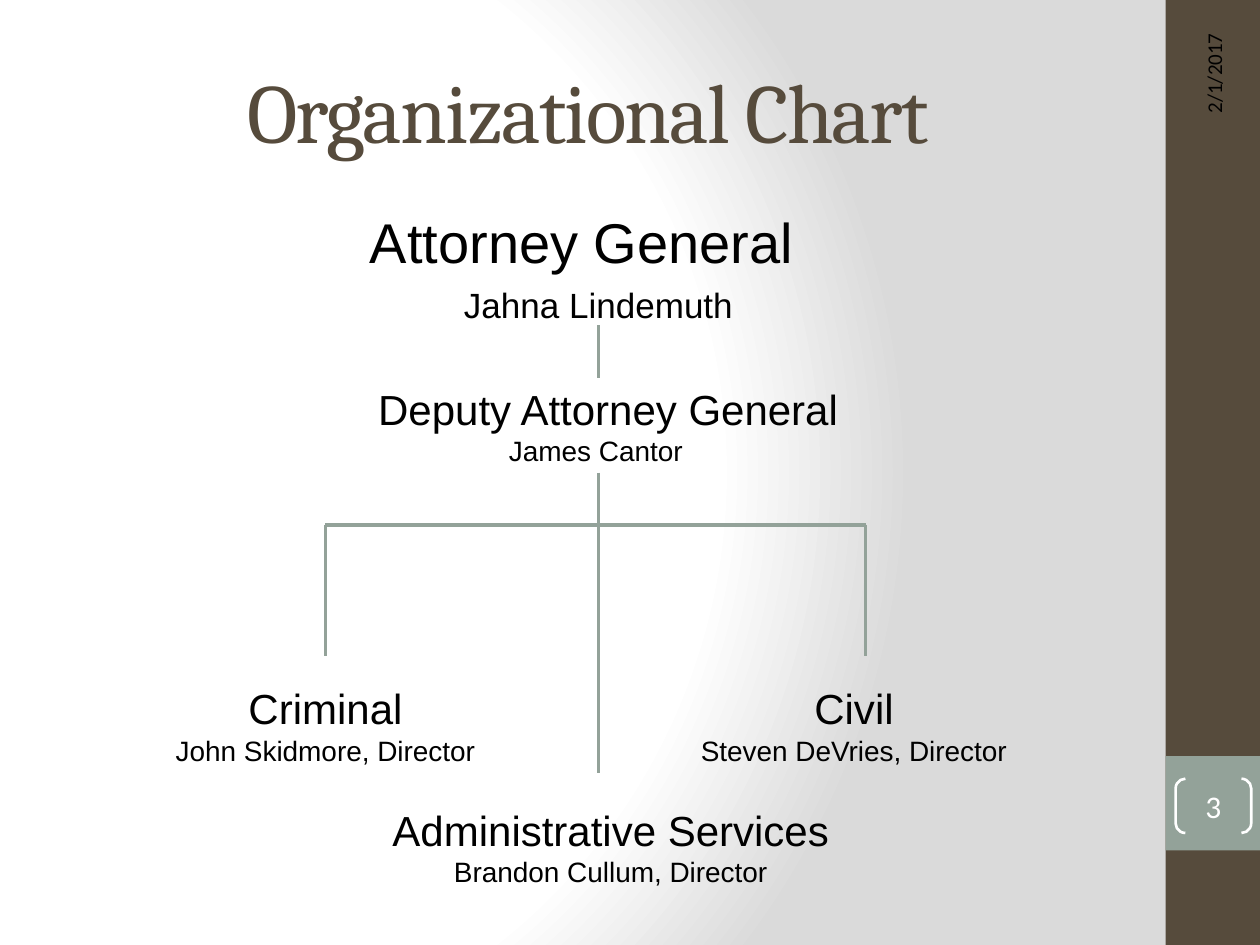
from dataclasses import dataclass

from lxml.etree import SubElement
from pptx import Presentation
from pptx.dml.color import RGBColor
from pptx.enum.shapes import MSO_CONNECTOR, MSO_SHAPE
from pptx.enum.text import MSO_ANCHOR, PP_ALIGN
from pptx.oxml import parse_xml
from pptx.oxml.ns import nsdecls, qn
from pptx.slide import Slide
from pptx.util import Pt

COLORS = {
    "brown": "564B3C",
    "sage": "93A299",
    "white": "FFFFFF",
    "gray": "DADADA",
    "black": "000000",
}


@dataclass
class Canvas:
    """Draws styled elements on the current slide, with lengths in points."""

    slide: Slide
    font: str = "Arial"
    line_width: float = 2

    def color(self, name):
        return RGBColor.from_string(COLORS[name])

    def background(self, stops):
        self.slide.background.fill.solid()
        solid = self.slide.element.find(".//" + qn("p:bgPr")).find(qn("a:solidFill"))
        stop_xml = "".join(
            f'<a:gs pos="{percent * 1000}"><a:srgbClr val="{COLORS[name]}"/></a:gs>'
            for percent, name in stops
        )
        gradient = parse_xml(
            f'<a:gradFill {nsdecls("a")} rotWithShape="1"><a:gsLst>{stop_xml}</a:gsLst>'
            '<a:path path="circle"><a:fillToRect l="20000" t="50000" r="100000" b="50000"/>'
            "</a:path></a:gradFill>"
        )
        solid.getparent().replace(solid, gradient)

    def shape(self, kind, box, fill=None, line=None):
        shape = self.slide.shapes.add_shape(kind, *map(Pt, box))
        shape.shadow.inherit = False
        if fill:
            shape.fill.solid()
            shape.fill.fore_color.rgb = self.color(fill)
        else:
            shape.fill.background()
        if line:
            shape.line.color.rgb = self.color(line)
            shape.line.width = Pt(1.5)
        else:
            shape.line.fill.background()
        return shape

    def styled_run(self, paragraph, text, size, font=None, color="black", spacing=0):
        run = paragraph.add_run()
        run.text = text
        run.font.size = Pt(size)
        run.font.name = font or self.font
        run.font.color.rgb = self.color(color)
        if spacing:
            run.font._element.set("spc", str(spacing * 100))

    def text(self, box, lines, align=PP_ALIGN.CENTER, anchor=MSO_ANCHOR.TOP, **style):
        shape = self.slide.shapes.add_textbox(*map(Pt, box))
        frame = shape.text_frame
        frame.word_wrap = True
        frame.vertical_anchor = anchor
        for index, (text, size, before, indent) in enumerate(lines):
            paragraph = frame.add_paragraph() if index else frame.paragraphs[0]
            paragraph.alignment = align
            paragraph.space_before = Pt(before)
            paragraph._p.get_or_add_pPr().set("marL", str(Pt(indent)))
            self.styled_run(paragraph, text, size, **style)
        return shape

    def unit(self, box, name, person):
        self.text(box, [(name, 24, 0, 0), (person, 16, 0, 0)])

    def line(self, start, end):
        connector = self.slide.shapes.add_connector(
            MSO_CONNECTOR.STRAIGHT, *map(Pt, start + end)
        )
        connector.line.color.rgb = self.color("sage")
        connector.line.width = Pt(self.line_width)
        SubElement(connector._element.spPr, qn("a:effectLst"))


def main():
    presentation = Presentation()
    presentation.slide_width, presentation.slide_height = Pt(720), Pt(540)
    canvas = Canvas(presentation.slides.add_slide(presentation.slide_layouts[6]))

    canvas.background([(0, "white"), (75, "white"), (100, "gray")])
    canvas.shape(MSO_SHAPE.RECTANGLE, (666, 0, 54, 540), fill="brown")
    canvas.shape(MSO_SHAPE.RECTANGLE, (666, 432, 54, 54), fill="sage")

    canvas.text(
        (36, 18, 600, 90),
        [("Organizational Chart", 48, 0, 0)],
        anchor=MSO_ANCHOR.MIDDLE,
        font="Cambria",
        color="brown",
        spacing=-1,
    )
    leaders = canvas.text(
        (30, 111, 600, 378),
        [
            ("Attorney General", 32, 0, 5),
            ("Jahna Lindemuth", 20, 5, 24),
            ("Deputy Attorney General", 24, 33, 35),
            ("James Cantor", 16, 0, 21),
        ],
    )
    leaders.text_frame.margin_top = Pt(7.5)

    date = canvas.text(
        (579.6, 111.6, 228, 28.8),
        [("2/1/2017", 12, 0, 0)],
        align=PP_ALIGN.RIGHT,
        anchor=MSO_ANCHOR.MIDDLE,
        font="Calibri",
    )
    date.rotation = 270

    bracket = canvas.shape(MSO_SHAPE.DOUBLE_BRACKET, (671.8, 445, 43.2, 31), line="white")
    bracket.adjustments[0] = 0.18
    frame = bracket.text_frame
    frame.margin_left = frame.margin_right = frame.margin_top = frame.margin_bottom = 0
    frame.vertical_anchor = MSO_ANCHOR.MIDDLE
    frame.paragraphs[0].alignment = PP_ALIGN.CENTER
    canvas.styled_run(frame.paragraphs[0], "3", 18, font="Calibri", color="white")

    left, trunk, right, branch = 186, 342, 494.6, 300
    canvas.line((left, branch), (right, branch))
    for x in (left, right):
        canvas.line((x, branch), (x, 375))
    for top, bottom in ((186, 216), (270, 307.5), (307.5, 442)):
        canvas.line((trunk, top), (trunk, bottom))

    canvas.unit((388, 386.6, 200, 55.4), "Civil", "Steven DeVries, Director")
    canvas.unit((86, 386.6, 200, 55.4), "Criminal", "John Skidmore, Director")
    canvas.unit((209, 456, 280, 55.4), "Administrative Services", "Brandon Cullum, Director")

    presentation.save("out.pptx")


if __name__ == "__main__":
    main()
